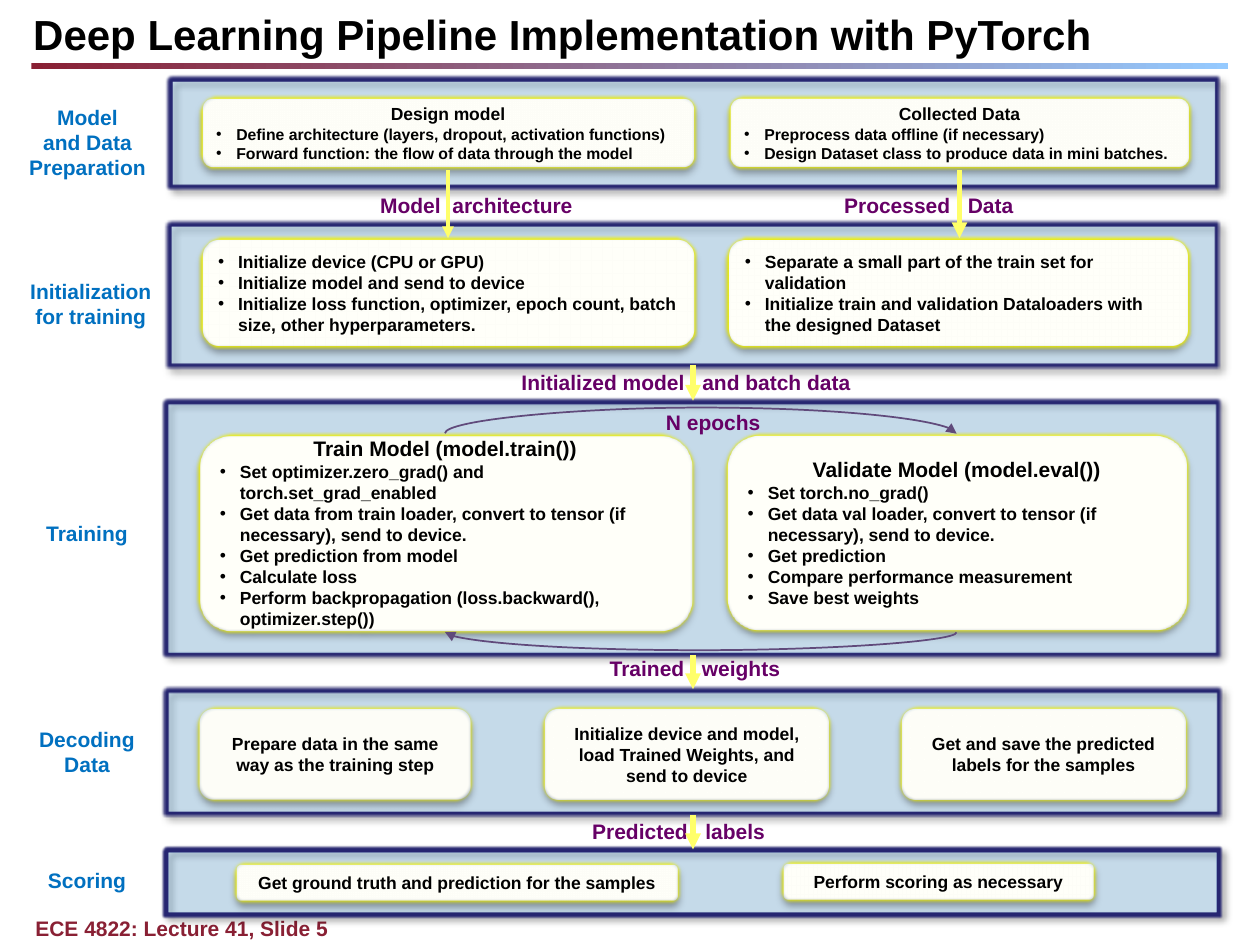
from dataclasses import dataclass

from lxml.etree import SubElement
from pptx import Presentation
from pptx.dml.color import RGBColor as RGB
from pptx.enum.shapes import MSO_CONNECTOR as CONN, MSO_SHAPE as SHAPE
from pptx.enum.text import MSO_ANCHOR as ANCHOR, PP_ALIGN as ALIGN
from pptx.oxml.ns import qn
from pptx.util import Pt


@dataclass(frozen=True)
class Theme:
    font: str = "Arial"
    ink: str = "000000"
    maroon: str = "892034"
    sky: str = "95CAFF"
    stage: str = "0070C0"
    flow: str = "660066"
    panel: str = "85CBFF"
    panel_line: str = "262671"
    card: str = "FFFFF9"
    card_line: str = "F0F000"
    arrow: str = "FFFF6A"
    loop: str = "604A7B"
    title_size: int = 24
    label_size: int = 12
    body_size: int = 10
    small_size: int = 9


T = Theme()
BULLET_INDENT = 11.5
SPACE = 3.33  # width of one space at label size

# Panels: left, top, width, height
PANELS = [
    (96.5, 44.6, 599, 62.6),
    (95.8, 127.4, 599.8, 82.1),
    (94.3, 229, 602.6, 145.4),
    (94.3, 393.8, 602.6, 71.3),
    (94.3, 485.3, 602.6, 37.4),
]

# Stage names: text, left, top, width, height
STAGES = [
    ("Model\vand Data Preparation", 7.9, 56.2, 84.2, 51),
    ("Initialization\vfor training", 5.8, 155.5, 92.2, 36),
    ("Training", 3.6, 293.8, 92.2, 21.6),
    ("Decoding\vData", 3.6, 411.8, 92.2, 36),
    ("Scoring", 3.6, 492.5, 92.2, 21.6),
]

# Cards with bullets: box, heading, heading size, bullets, bullet size
LISTS = [
    ((114.5, 55.4, 283, 41), "Design model", T.body_size, [
        "Define architecture (layers, dropout, activation functions)",
        "Forward function: the flow of data through the model"], T.small_size),
    ((416.2, 55.4, 264.2, 41), "Collected Data", T.body_size, [
        "Preprocess data offline (if necessary)",
        "Design Dataset class to produce data in mini batches."], T.small_size),
    ((114.5, 136.1, 283, 62.6), None, None, [
        "Initialize device (CPU or GPU)",
        "Initialize model and send to device",
        "Initialize loss function, optimizer, epoch count, batch size, "
        "other hyperparameters."], T.body_size),
    ((415.5, 136.1, 264.2, 62.6), None, None, [
        "Separate a small part of the train set for validation",
        "Initialize train and validation Dataloaders with the designed Dataset"],
     T.body_size),
    ((113, 247.7, 283, 113.5), "Train Model (model.train())", T.label_size, [
        "Set optimizer.zero_grad() and torch.set_grad_enabled",
        "Get data from train loader, convert to tensor (if necessary), send to device.",
        "Get prediction from model",
        "Calculate loss",
        "Perform backpropagation (loss.backward(), optimizer.step())"], T.body_size),
    ((414.7, 247.7, 264.2, 113), "Validate Model (model.eval())", T.label_size, [
        "Set torch.no_grad()",
        "Get data val loader, convert to tensor (if necessary), send to device.",
        "Get prediction",
        "Compare performance measurement",
        "Save best weights"], T.body_size),
]

# Cards with one centred sentence
STEPS = [
    ((113, 403.9, 157, 54), "Prepare data in the same way as the training step"),
    ((310.3, 403.9, 164.2, 54),
     "Initialize device and model, load Trained Weights, and send to device"),
    ((514.1, 403.9, 164.2, 54), "Get and save the predicted labels for the samples"),
    ((133.9, 493.2, 254.2, 22.3), "Get ground truth and prediction for the samples"),
    ((446.4, 492.5, 179.3, 22.3), "Perform scoring as necessary"),
]

# Flow labels: words before and after the arrow, gap in spaces, left, top, width
FLOWS = [
    ("Model", "architecture", 2, 197.3, 106.6, 149.8),
    ("Processed", "Data", 3, 455.8, 106.6, 149.8),
    ("Initialized model", "and batch data", 3, 289.4, 207.4, 205.2),
    ("Trained", "weights", 3, 340.6, 370.8, 113),
    ("Predicted", "labels", 3, 330.5, 464.4, 114.5),
]

# Flow arrows: x, top, bottom, line width
ARROWS = [
    (256, 97.2, 136.1, 2.25),
    (548.3, 97.2, 136.1, 3),
    (396, 208.8, 229, 3),
    (396, 374.4, 393.8, 3),
    (396, 465.8, 485.3, 3),
]


def child(parent, tag, **attrs):
    return SubElement(parent, qn(tag), {k: str(v) for k, v in attrs.items()})


def style(p, size, color=T.ink, align=None):
    p.font.name, p.font.size, p.font.bold = T.font, Pt(size), True
    p.font.color.rgb = RGB.from_string(color)
    p.alignment = align


def add_effects(s, shadow_alpha, angle, soft):
    effects = child(s._element.spPr, "a:effectLst")
    shadow = child(effects, "a:outerShdw", blurRad=Pt(4), dist=Pt(3),
                   dir=angle * 60000, algn="ctr", rotWithShape=0)
    color = child(shadow, "a:srgbClr", val="000000")
    child(color, "a:alpha", val=shadow_alpha * 1000)
    child(effects, "a:softEdge", rad=Pt(soft))


def add_box(slide, kind, box, fill, line, width):
    s = slide.shapes.add_shape(kind, *map(Pt, box))
    s.fill.solid()
    s.fill.fore_color.rgb = RGB.from_string(fill)
    s.line.color.rgb = RGB.from_string(line)
    s.line.width = Pt(width)
    return s


def add_panel(slide, box):
    s = add_box(slide, SHAPE.RECTANGLE, box, T.panel, T.panel_line, 4)
    color = s._element.spPr.find(qn("a:solidFill"))[0]
    child(color, "a:alpha", val=29000)
    add_effects(s, 40, 45, 1)


def add_card(slide, box, heading, heading_size, bullets=(), size=None):
    s = add_box(slide, SHAPE.ROUNDED_RECTANGLE, box, T.card, T.card_line, 2.5)
    add_effects(s, 35, 90, 2)
    tf = s.text_frame
    tf.word_wrap, tf.vertical_anchor = True, ANCHOR.MIDDLE
    p = tf.paragraphs[0]
    if heading:
        p.text = heading
        style(p, heading_size, align=ALIGN.CENTER)
    for i, text in enumerate(bullets):
        if i or heading:
            p = tf.add_paragraph()
        p.text = text
        pPr = p._p.get_or_add_pPr()
        pPr.set("marL", str(Pt(BULLET_INDENT)))
        pPr.set("indent", str(-Pt(BULLET_INDENT)))
        child(pPr, "a:buFont", typeface=T.font)
        child(pPr, "a:buChar", char="•")
        style(p, size, align=ALIGN.LEFT)


def add_label(slide, text, box, color, size=T.label_size, align=ALIGN.CENTER, inset=True):
    s = slide.shapes.add_textbox(*map(Pt, box))
    tf = s.text_frame
    tf.word_wrap = True
    if not inset:
        tf.margin_left = tf.margin_right = tf.margin_top = tf.margin_bottom = 0
    p = tf.paragraphs[0]
    p.text = text
    style(p, size, color, align)
    return tf


def add_flow(slide, before, after, spaces, left, top, width):
    p = add_label(slide, before, (left, top, width, 21.6), T.flow).paragraphs[0]
    gap = p.add_run()
    gap.text = " "
    gap._r.get_or_add_rPr().set("spc", str(round((spaces - 1) * SPACE * 100)))
    p.add_run().text = after


def add_arrow(slide, kind, points, color, width):
    s = slide.shapes.add_connector(kind, *map(Pt, points))
    s.line.color.rgb = RGB.from_string(color)
    s.line.width = Pt(width)
    child(s.line._get_or_add_ln(), "a:tailEnd", type="triangle")
    child(s._element.spPr, "a:effectLst")
    return s


def add_loop(slide, y, depth, rotation):
    """Curved arrow between the training cards, bulging by depth."""
    center, half, thin = 400.3, 146.2, 0.25
    s = add_arrow(slide, CONN.CURVE, (center + thin, y - half, center, y + half), T.loop, 1)
    spPr = s._element.spPr
    spPr.find(qn("a:xfrm")).set("rot", str(rotation * 60000))
    guides = spPr.find(qn("a:prstGeom")).find(qn("a:avLst"))
    child(guides, "a:gd", name="adj1", fmla=f"val {round(-depth / thin * 100000)}")


def add_frame(slide):
    rule = slide.shapes.add_shape(SHAPE.RECTANGLE, Pt(18), Pt(36), Pt(684), Pt(3.6))
    rule.shadow.inherit = False
    rule.line.fill.background()
    rule.fill.gradient()
    rule.fill.gradient_angle = 0
    for stop, color, pos in zip(rule.fill.gradient_stops, (T.maroon, T.sky), (0, 1)):
        stop.color.rgb, stop.position = RGB.from_string(color), pos
    tf = add_label(slide, "Deep Learning Pipeline Implementation with PyTorch",
                   (19, 0, 701, 38.2), T.ink, T.title_size, ALIGN.LEFT, inset=False)
    tf.vertical_anchor = ANCHOR.MIDDLE
    add_label(slide, "ECE 4822: Lecture 41, Slide 5", (20.2, 523.4, 642, 14.4),
              T.maroon, align=ALIGN.LEFT, inset=False)


def main():
    prs = Presentation()
    prs.slide_width, prs.slide_height = Pt(720), Pt(540)
    slide = prs.slides.add_slide(prs.slide_layouts[6])
    add_frame(slide)

    # Stages and their cards
    for box in PANELS:
        add_panel(slide, box)
    for text, *box in STAGES:
        add_label(slide, text, box, T.stage)
    for card in LISTS:
        add_card(slide, *card)
    for box, text in STEPS:
        add_card(slide, box, text, T.body_size)

    # Flow between stages
    for flow in FLOWS:
        add_flow(slide, *flow)
    for x, top, bottom, width in ARROWS:
        add_arrow(slide, CONN.STRAIGHT, (x, top, x, bottom), T.arrow, width)

    # Epoch loop
    add_label(slide, "N epochs", (373, 230.4, 69.1, 21.6), T.flow)
    add_loop(slide, 247.7, 14.4, 270)
    add_loop(slide, 361.2, 10, 90)

    prs.save("out.pptx")


if __name__ == "__main__":
    main()
